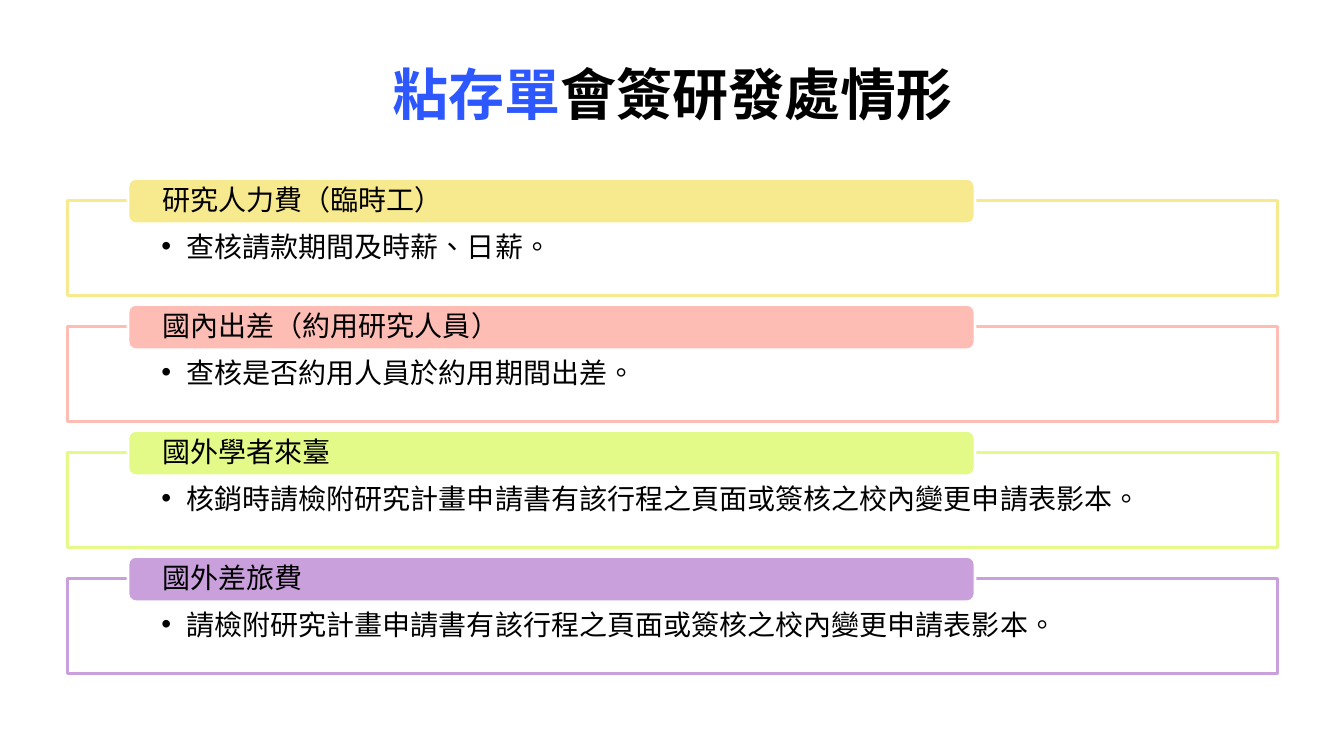
"""Build the slide on how payment vouchers are countersigned."""
from typing import NamedTuple

from lxml import etree
from pptx import Presentation
from pptx import util as u
from pptx.dml.color import RGBColor
from pptx.enum import lang, shapes, text
from pptx.oxml import ns

BLACK = RGBColor(0x00, 0x00, 0x00)
WHITE = RGBColor(0xFF, 0xFF, 0xFF)
BLUE = RGBColor(0x2E, 0x58, 0xFF)
YELLOW = RGBColor(0xF7, 0xE9, 0x8E)
PINK = RGBColor(0xFD, 0xBC, 0xB4)
LIME = RGBColor(0xE3, 0xF9, 0x88)
PURPLE = RGBColor(0xC9, 0xA0, 0xDC)
BODY_FONT = "Noto Sans CJK SC"
TITLE_FONT = "Quicksand"
FIRST_TOP, STEP = 1.99, 1.25
HEADER_RISE = 0.22


class Section(NamedTuple):
    heading: str
    detail: str
    color: RGBColor


SECTIONS = [
    Section("研究人力費（臨時工）", "查核請款期間及時薪、日薪。", YELLOW),
    Section("國內出差（約用研究人員）", "查核是否約用人員於約用期間出差。", PINK),
    Section("國外學者來臺", "核銷時請檢附研究計畫申請書有該行程之頁面或簽核之校內變更申請表影本。", LIME),
    Section("國外差旅費", "請檢附研究計畫申請書有該行程之頁面或簽核之校內變更申請表影本。", PURPLE),
]


def add_run(paragraph, content: str, *, size: float = 20, font: str = BODY_FONT,
            color: RGBColor = BLACK, bold: bool = False) -> None:
    """Append formatted Traditional Chinese text to a paragraph."""
    run = paragraph.add_run()
    run.text = content
    run.font.size = u.Pt(size)
    run.font.name = font
    run.font.bold = bold
    run.font.color.rgb = color
    run.font.language_id = lang.MSO_LANGUAGE_ID.TRADITIONAL_CHINESE
    properties = run.font._element
    etree.SubElement(properties, ns.qn("a:ea"), typeface=BODY_FONT)


def set_bullet(paragraph) -> None:
    """Give a paragraph a hanging round bullet."""
    properties = paragraph._p.get_or_add_pPr()
    properties.set("marL", str(u.Inches(0.25)))
    properties.set("indent", str(-u.Inches(0.25)))
    etree.SubElement(properties, ns.qn("a:buFont"), typeface="Arial")
    etree.SubElement(properties, ns.qn("a:buChar"), char="•")


def add_box(slide, kind: shapes.MSO_SHAPE, box: tuple, content: str, *, fill: RGBColor,
            line: RGBColor, side: float, top: float = 0, bottom: float = 0,
            anchor: text.MSO_ANCHOR = text.MSO_ANCHOR.TOP, bullet: bool = False) -> None:
    """Add an outlined shape holding one left-aligned paragraph."""
    shape = slide.shapes.add_shape(kind, *map(u.Inches, box))
    shape.shadow.inherit = False
    shape.fill.solid()
    shape.fill.fore_color.rgb = fill
    shape.line.color.rgb = line
    shape.line.width = u.Pt(2)
    frame = shape.text_frame
    frame.word_wrap = True
    frame.vertical_anchor = anchor
    frame.margin_left = frame.margin_right = u.Inches(side)
    frame.margin_top, frame.margin_bottom = u.Inches(top), u.Inches(bottom)
    paragraph = frame.paragraphs[0]
    paragraph.alignment = text.PP_ALIGN.LEFT
    paragraph.line_spacing = 0.9
    if bullet:
        set_bullet(paragraph)
    add_run(paragraph, content)


def add_title(slide) -> None:
    """Add the two-colour centred title."""
    box = slide.shapes.add_textbox(*map(u.Inches, (0.67, 0.3, 12, 1.25)))
    frame = box.text_frame
    frame.word_wrap = True
    frame.vertical_anchor = text.MSO_ANCHOR.MIDDLE
    paragraph = frame.paragraphs[0]
    paragraph.alignment = text.PP_ALIGN.CENTER
    for content, color in (("粘存單", BLUE), ("會簽研發處情形", BLACK)):
        add_run(paragraph, content, size=40, font=TITLE_FONT, color=color, bold=True)


def add_section(slide, section: Section, top: float) -> None:
    """Add a framed detail with its heading tab."""
    add_box(slide, shapes.MSO_SHAPE.RECTANGLE, (0.67, top, 12, 0.94), section.detail,
            fill=WHITE, line=section.color, side=0.93, top=0.32, bottom=0.16, bullet=True)
    add_box(slide, shapes.MSO_SHAPE.ROUNDED_RECTANGLE, (1.27, top - HEADER_RISE, 8.4, 0.45),
            section.heading, fill=section.color, line=WHITE, side=0.32,
            anchor=text.MSO_ANCHOR.MIDDLE)


def main() -> None:
    """Create and save the presentation."""
    presentation = Presentation()
    presentation.slide_width = u.Inches(13.33)
    presentation.slide_height = u.Inches(7.5)
    slide = presentation.slides.add_slide(presentation.slide_layouts[6])
    add_title(slide)
    for index, section in enumerate(SECTIONS):
        add_section(slide, section, FIRST_TOP + index * STEP)
    presentation.save("out.pptx")


if __name__ == "__main__":
    main()
